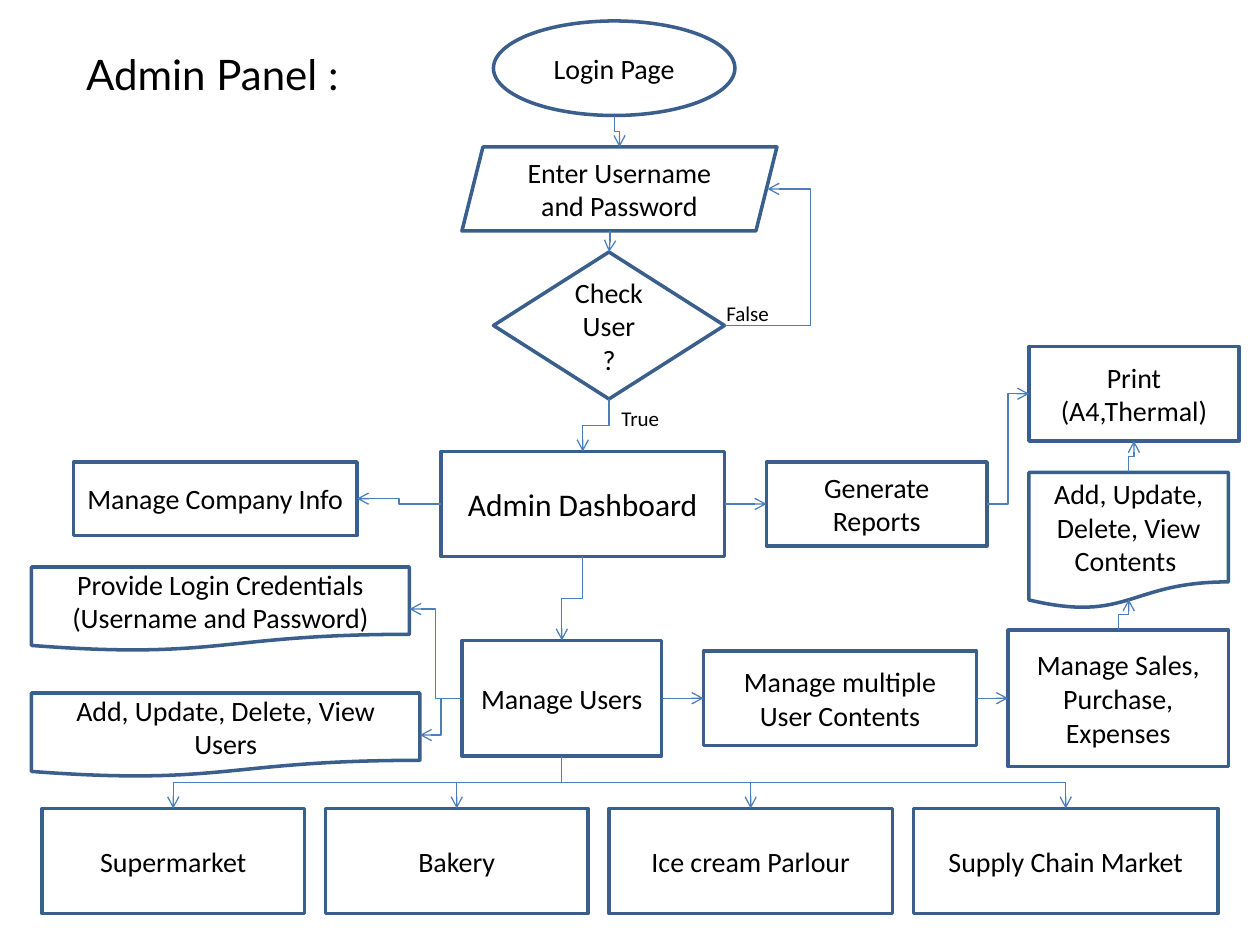
"""Build the admin panel flowchart slide."""
from dataclasses import dataclass

import lxml.etree
import pptx
import pptx.dml.color
import pptx.enum.shapes
import pptx.enum.text
import pptx.oxml.ns
import pptx.util

COLUMNS, ROWS = 120, 90
WIDTH, HEIGHT = pptx.util.Inches(10), pptx.util.Inches(7.5)
INK, PAPER, BORDER, ARROW = "000000", "FFFFFF", "3A5F8C", "4B7EBC"

KINDS = pptx.enum.shapes.MSO_SHAPE
RECT, DOCUMENT = KINDS.RECTANGLE, KINDS.FLOWCHART_DOCUMENT
DIAMOND, SLANTED, OVAL = KINDS.DIAMOND, KINDS.PARALLELOGRAM, KINDS.OVAL
ALIGN, ANCHOR = pptx.enum.text.PP_ALIGN, pptx.enum.text.MSO_ANCHOR

TOP, LEFT, BOTTOM, RIGHT = range(4)
SIDE_SHARES = {TOP: (0.5, 0), LEFT: (0, 0.5), BOTTOM: (0.5, 1), RIGHT: (1, 0.5)}
SPECIAL_SHARES = {
    (SLANTED, BOTTOM): (0.47, 1),
    (SLANTED, RIGHT): (0.97, 0.5),
    (DOCUMENT, BOTTOM): (0.5, 0.93),
}
FOUR_SIDED = (RECT, DOCUMENT, DIAMOND)


@dataclass(frozen=True)
class Step:
    """One flowchart step, placed in grid columns and rows."""
    text: str
    column: float
    row: float
    columns: float
    rows: float
    kind: int = RECT
    size: int = 16


@dataclass(frozen=True)
class Link:
    """An arrow from a side of one step to a side of another."""
    start: str
    start_side: int
    end: str
    end_side: int
    bend: float = 0.5


STEPS = {
    "login": Step("Login Page", 47, 2, 23, 9, OVAL),
    "credentials": Step("Enter Username and Password", 44, 14, 30, 8, SLANTED),
    "check": Step("Check User\n?", 47, 24, 22, 14, DIAMOND),
    "dashboard": Step("Admin Dashboard", 42, 43, 27, 10, size=18),
    "company": Step("Manage Company Info", 7, 44, 27, 7),
    "reports": Step("Generate Reports", 73, 44, 21, 8),
    "print": Step("Print\n(A4,Thermal)", 98, 33, 20, 9),
    "contents": Step("Add, Update, Delete, View\nContents ", 98, 45, 19, 13, DOCUMENT),
    "sales": Step("Manage Sales, Purchase, Expenses", 96, 60, 21, 13),
    "multiple": Step("Manage multiple User Contents", 67, 62, 26, 9),
    "users": Step("Manage Users", 44, 61, 19, 11),
    "provide": Step("Provide Login Credentials (Username and Password)", 3, 54, 36, 8, DOCUMENT),
    "edit": Step("Add, Update, Delete, View\nUsers", 3, 66, 37, 8, DOCUMENT),
}
SHOPS = {"Supermarket": 25, "Bakery": 25, "Ice cream Parlour": 27, "Supply Chain Market": 29}
SHOP_LEFT, SHOP_ROW, SHOP_ROWS, SHOP_GAP = 4, 77, 10, 2

LINKS = [
    Link("login", BOTTOM, "credentials", TOP),
    Link("credentials", BOTTOM, "check", TOP),
    Link("check", RIGHT, "credentials", RIGHT, 2),
    Link("check", BOTTOM, "dashboard", TOP),
    Link("dashboard", LEFT, "company", RIGHT),
    Link("dashboard", RIGHT, "reports", LEFT),
    Link("dashboard", BOTTOM, "users", TOP),
    Link("reports", RIGHT, "print", LEFT),
    Link("users", LEFT, "provide", RIGHT),
    Link("users", LEFT, "edit", RIGHT),
    Link("users", RIGHT, "multiple", LEFT),
    Link("multiple", RIGHT, "sales", LEFT),
    Link("sales", TOP, "contents", BOTTOM),
    Link("contents", TOP, "print", BOTTOM),
    *(Link("users", BOTTOM, shop, TOP) for shop in SHOPS),
]


def across(columns: float) -> int:
    """Convert grid columns to a length."""
    return round(WIDTH * columns / COLUMNS)


def down(rows: float) -> int:
    """Convert grid rows to a length."""
    return round(HEIGHT * rows / ROWS)


def color(value: str) -> pptx.dml.color.RGBColor:
    """Turn a hex string into a colour."""
    return pptx.dml.color.RGBColor.from_string(value)


def write(frame, text: str, *, size: float, font: str = "Calibri", align=ALIGN.LEFT,
          anchor=ANCHOR.TOP, wrap: bool = True) -> None:
    """Fill a text frame, one paragraph per line."""
    frame.text = text
    frame.word_wrap = wrap
    frame.vertical_anchor = anchor
    for paragraph in frame.paragraphs:
        paragraph.alignment = align
        for run in paragraph.runs:
            run.font.size = pptx.util.Pt(size)
            run.font.name = font
            run.font.color.rgb = color(INK)


def draw_step(slide, step: Step):
    """Draw one step and return its shape."""
    shape = slide.shapes.add_shape(step.kind, across(step.column), down(step.row),
                                   across(step.columns), down(step.rows))
    shape.shadow.inherit = False
    shape.fill.solid()
    shape.fill.fore_color.rgb = color(PAPER)
    shape.line.color.rgb = color(BORDER)
    shape.line.width = pptx.util.Pt(2)
    write(shape.text_frame, step.text, size=step.size, align=ALIGN.CENTER, anchor=ANCHOR.MIDDLE)
    return shape


def side_point(step: Step, side: int) -> tuple[int, int]:
    """Find where an arrow meets a side of a step."""
    x_share, y_share = SPECIAL_SHARES.get((step.kind, side), SIDE_SHARES[side])
    return (across(step.column + step.columns * x_share),
            down(step.row + step.rows * y_share))


def quarter_turn(point: tuple[int, int], center: tuple[int, int]) -> tuple[int, int]:
    """Turn a point a quarter counterclockwise about a center."""
    return (center[0] + point[1] - center[1], center[1] - point[0] + center[0])


def draw_link(slide, link: Link, steps: dict[str, Step], shapes: dict) -> None:
    """Draw one elbow arrow, turned when it leaves a step vertically."""
    first, last = steps[link.start], steps[link.end]
    begin, end = side_point(first, link.start_side), side_point(last, link.end_side)
    vertical = link.start_side in (TOP, BOTTOM)
    if vertical:
        center = ((begin[0] + end[0]) // 2, (begin[1] + end[1]) // 2)
        begin, end = quarter_turn(begin, center), quarter_turn(end, center)
    arrow = slide.shapes.add_connector(pptx.enum.shapes.MSO_CONNECTOR.ELBOW, *begin, *end)
    if first.kind in FOUR_SIDED and last.kind in FOUR_SIDED:
        arrow.begin_connect(shapes[link.start], link.start_side)
        arrow.end_connect(shapes[link.end], link.end_side)
        arrow.begin_x, arrow.begin_y = begin
        arrow.end_x, arrow.end_y = end
    arrow.line.color.rgb = color(ARROW)
    arrow.line.width = pptx.util.Pt(0.75)
    qn = pptx.oxml.ns.qn
    properties = arrow.line._get_or_add_ln().getparent()
    if vertical:
        properties.find(qn("a:xfrm")).set("rot", str(90 * 60000))
    lxml.etree.SubElement(properties.find(qn("a:ln")), qn("a:tailEnd"), type="arrow")
    lxml.etree.SubElement(properties, qn("a:effectLst"))
    bends = properties.find(qn("a:prstGeom")).find(qn("a:avLst"))
    lxml.etree.SubElement(bends, qn("a:gd"), name="adj1", fmla=f"val {round(link.bend * 100000)}")


def shop_steps() -> dict[str, Step]:
    """Lay the shops out in one row with equal gaps."""
    row, column = {}, SHOP_LEFT
    for shop, columns in SHOPS.items():
        row[shop] = Step(shop, column, SHOP_ROW, columns, SHOP_ROWS)
        column += columns + SHOP_GAP
    return row


def main() -> None:
    """Build and save the slide."""
    deck = pptx.Presentation()
    deck.slide_width, deck.slide_height = WIDTH, HEIGHT
    slide = deck.slides.add_slide(deck.slide_layouts[5])
    title = slide.shapes.title
    title.left, title.top, title.width, title.height = across(7), down(4), across(31.2), down(6)
    write(title.text_frame, "Admin Panel :", size=24, font="Lato", wrap=False)
    steps = STEPS | shop_steps()
    shapes = {key: draw_step(slide, step) for key, step in steps.items()}
    for link in LINKS:
        draw_link(slide, link, steps, shapes)
    for answer, column, row in (("True", 58, 38), ("False", 68, 28)):
        label = slide.shapes.add_textbox(across(column), down(row), across(7), down(3.6))
        write(label.text_frame, answer, size=12)
    deck.save("out.pptx")


if __name__ == "__main__":
    main()
